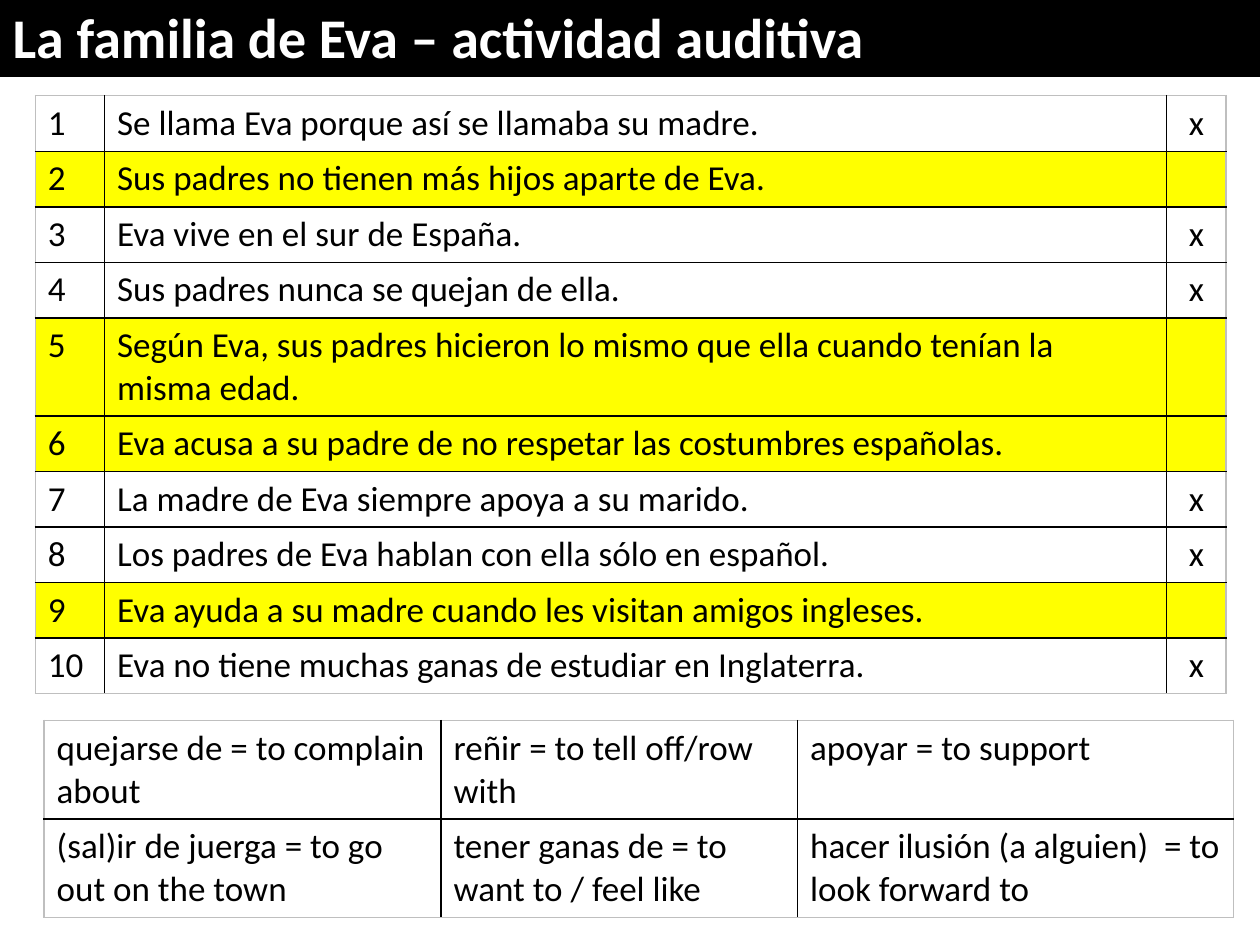
from lxml.etree import SubElement
from pptx import Presentation
from pptx.dml.color import RGBColor
from pptx.enum.text import MSO_ANCHOR, MSO_AUTO_SIZE, PP_ALIGN
from pptx.oxml.ns import qn
from pptx.util import Inches, Pt

BLACK = RGBColor(0, 0, 0)
WHITE = RGBColor(255, 255, 255)
YELLOW = RGBColor(255, 255, 0)
GREY = RGBColor(0xBF, 0xBF, 0xBF)

HEAD = {"name": "Calibri", "size": Pt(32), "bold": True}
BODY = {"name": "Calibri", "size": Pt(20), "bold": False}

CLAIMS = [
    "Se llama Eva porque así se llamaba su madre.",
    "Sus padres no tienen más hijos aparte de Eva.",
    "Eva vive en el sur de España.",
    "Sus padres nunca se quejan de ella.",
    "Según Eva, sus padres hicieron lo mismo que ella cuando tenían la misma edad.",
    "Eva acusa a su padre de no respetar las costumbres españolas.",
    "La madre de Eva siempre apoya a su marido.",
    "Los padres de Eva hablan con ella sólo en español.",
    "Eva ayuda a su madre cuando les visitan amigos ingleses.",
    "Eva no tiene muchas ganas de estudiar en Inglaterra.",
]
TRUE = {2, 5, 6, 9}
LONG = 5
VOCAB = [
    ["quejarse de = to complain about", "reñir = to tell off/row with",
     "apoyar = to support"],
    ["(sal)ir de juerga = to go out on the town",
     "tener ganas de = to want to / feel like",
     "hacer ilusión (a alguien)  = to look forward to"],
]


def style(font, look, color):
    for key, value in look.items():
        setattr(font, key, value)
    font.color.rgb = color


def add_title(slide, text):
    title = slide.shapes.title
    title.left, title.top = Inches(0), Inches(-0.03)
    title.width, title.height = Inches(10), Inches(0.64)
    title.fill.solid()
    title.fill.fore_color.rgb = BLACK
    frame = title.text_frame
    frame.auto_size = MSO_AUTO_SIZE.NONE
    frame.vertical_anchor = MSO_ANCHOR.MIDDLE
    frame.text = text
    line = frame.paragraphs[0]
    line.alignment = PP_ALIGN.LEFT
    style(line.runs[0].font, HEAD, WHITE)


def set_edges(cell, edges):
    """Draw the cell's borders; edges maps lnL, lnR, lnT, lnB to a colour."""
    props = cell._tc.get_or_add_tcPr()
    for i, (tag, color) in enumerate(edges.items()):
        line = SubElement(props, qn(f"a:{tag}"), w=str(Pt(1)))
        fill = SubElement(line, qn("a:solidFill"))
        SubElement(fill, qn("a:srgbClr"), val=str(color))
        props.insert(i, line)


def add_grid(slide, left, top, widths, heights, rows):
    """Add a table with black inner lines and a grey outer frame."""
    frame = slide.shapes.add_table(
        len(heights), len(widths), Inches(left), Inches(top),
        Inches(sum(widths)), Inches(sum(heights)))
    table = frame.table
    table.first_row = table.horz_banding = False
    for col, width in zip(table.columns, widths):
        col.width = Inches(width)
    for row, height in zip(table.rows, heights):
        row.height = Inches(height)
    for r, row in enumerate(rows):
        for c, text in enumerate(row):
            cell = table.cell(r, c)
            cell.fill.background()
            cell.text = text
            line = cell.text_frame.paragraphs[0]
            style(line.font, BODY, BLACK)
            for run in line.runs:
                style(run.font, BODY, BLACK)
            set_edges(cell, {
                "lnL": BLACK if c else GREY,
                "lnR": BLACK if c < len(widths) - 1 else GREY,
                "lnT": BLACK if r else GREY,
                "lnB": BLACK if r < len(heights) - 1 else GREY,
            })
    return table


def add_claims(slide):
    rows = [[str(n), claim, "" if n in TRUE else "x"]
            for n, claim in enumerate(CLAIMS, 1)]
    heights = [0.77 if n == LONG else 0.43 for n in range(1, len(rows) + 1)]
    table = add_grid(slide, 0.28, 0.76, [0.55, 8.43, 0.47], heights, rows)
    for n, row in enumerate(table.rows, 1):
        row.cells[2].text_frame.paragraphs[0].alignment = PP_ALIGN.CENTER
        if n in TRUE:
            for cell in row.cells:
                cell.fill.solid()
                cell.fill.fore_color.rgb = YELLOW


def main():
    deck = Presentation()
    deck.slide_width, deck.slide_height = Inches(10), Inches(7.5)
    slide = deck.slides.add_slide(deck.slide_layouts[5])
    add_title(slide, "La familia de Eva – actividad auditiva")
    add_claims(slide)
    add_grid(slide, 0.35, 5.72, [3.15, 2.83, 3.46], [0.77, 0.77], VOCAB)
    deck.save("out.pptx")


if __name__ == "__main__":
    main()
